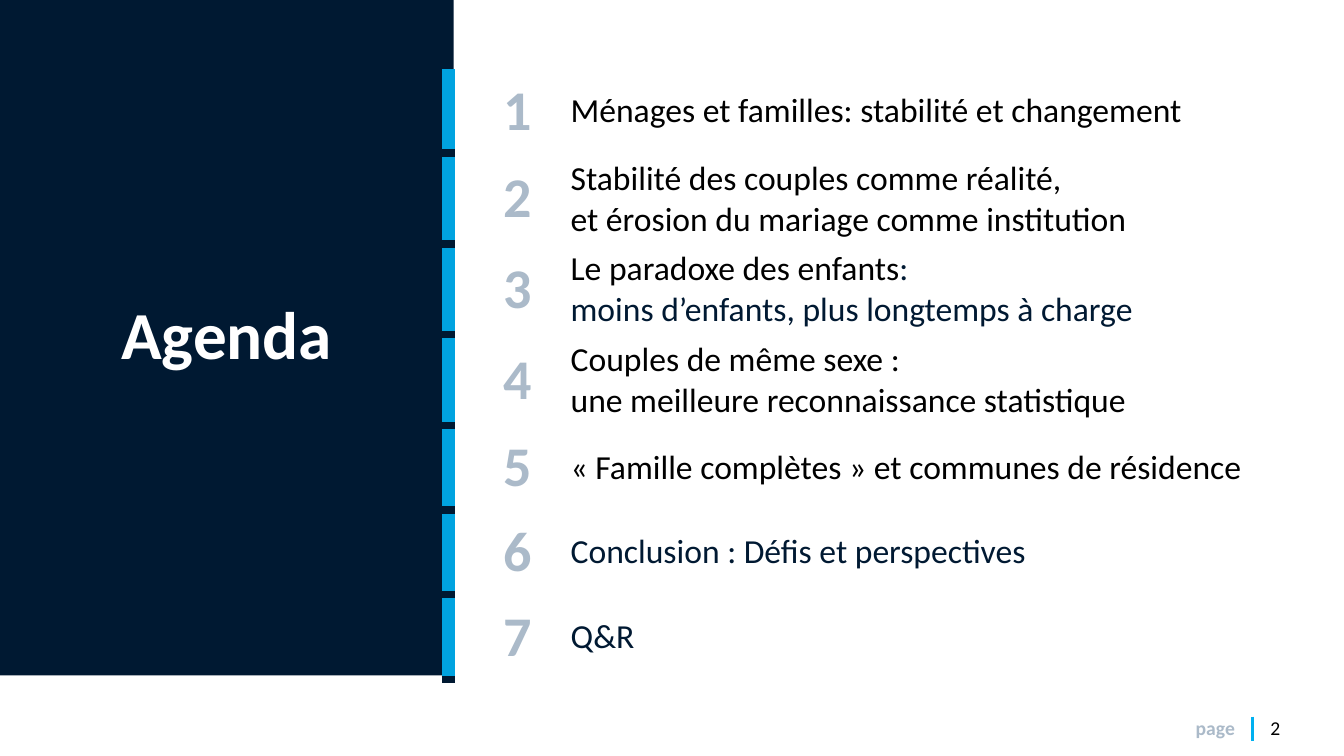
from dataclasses import dataclass

from lxml.etree import SubElement
from pptx import Presentation
from pptx.dml.color import RGBColor
from pptx.enum.shapes import MSO_CONNECTOR, MSO_SHAPE
from pptx.enum.text import MSO_ANCHOR, PP_ALIGN
from pptx.oxml.ns import qn
from pptx.util import Inches, Pt


@dataclass(frozen=True)
class Theme:
    font: str = "Calibri"
    navy: str = "001932"
    blue: str = "00A3E0"
    page_line: str = "00B0F0"
    grey: str = "ABBAC9"
    black: str = "000000"
    white: str = "FFFFFF"
    title_size: int = 48
    number_size: int = 40
    topic_size: int = 24
    page_size: int = 14


THEME = Theme()
NO_STYLE_NO_GRID = "{2D5ABB26-0587-4C30-8999-92F81FD0307C}"


@dataclass(frozen=True)
class Topic:
    text: str
    color: str = THEME.black
    ending: str = ""  # navy continuation of the text


TOPICS = (
    Topic("Ménages et familles: stabilité et changement"),
    Topic("Stabilité des couples comme réalité,\net érosion du mariage comme institution"),
    Topic("Le paradoxe des enfants",
          ending=": \nmoins d’enfants, plus longtemps à charge"),
    Topic("Couples de même sexe : \nune meilleure reconnaissance statistique"),
    Topic("« Famille complètes » et communes de résidence"),
    Topic("Conclusion : Défis et perspectives", THEME.navy),
    Topic("Q&R", THEME.navy),
)


def write(paragraph, text: str, *, size: int, color: str, bold: bool = False,
          align=PP_ALIGN.LEFT) -> None:
    """Append formatted text, turning each newline into a line break."""
    paragraph.alignment = align
    for index, line in enumerate(text.split("\n")):
        if index:
            paragraph.add_line_break()
        run = paragraph.add_run()
        run.text = line
        run.font.name = THEME.font
        run.font.size = Pt(size)
        run.font.bold = bold
        run.font.color.rgb = RGBColor.from_string(color)


def clear_margins(box) -> None:
    box.margin_left = box.margin_right = box.margin_top = box.margin_bottom = 0


def add_border(cell, side: str, color: str, width: float) -> None:
    """Add a border before the fill, where the schema expects it."""
    properties = cell._tc.get_or_add_tcPr()
    border = SubElement(properties, qn(f"a:{side}"), w=str(Pt(width)))
    fill = SubElement(border, qn("a:solidFill"))
    SubElement(fill, qn("a:srgbClr"), val=color)


def add_title_panel(slide) -> None:
    panel = slide.shapes.add_shape(MSO_SHAPE.RECTANGLE, 0, 0, Inches(4.5), Inches(6.7))
    panel.shadow.inherit = False
    panel.fill.solid()
    panel.fill.fore_color.rgb = RGBColor.from_string(THEME.navy)
    panel.line.fill.background()
    frame = panel.text_frame
    clear_margins(frame)
    frame.word_wrap = True
    frame.vertical_anchor = MSO_ANCHOR.MIDDLE
    frame.paragraphs[0].line_spacing = 0.9
    write(frame.paragraphs[0], "Agenda", size=THEME.title_size, color=THEME.white,
          bold=True, align=PP_ALIGN.CENTER)


def add_agenda(slide) -> None:
    row_height = 0.84
    frame = slide.shapes.add_table(len(TOPICS), 3, Inches(4.38), Inches(0.68),
                                   Inches(8.51), Inches(row_height * len(TOPICS)))
    agenda = frame.table
    agenda.first_row = agenda.horz_banding = False
    agenda._tbl.tblPr.find(qn("a:tableStyleId")).text = NO_STYLE_NO_GRID
    for column, width in zip(agenda.columns, (0.13, 1.05, 7.33)):
        column.width = Inches(width)

    for index, topic in enumerate(TOPICS):
        agenda.rows[index].height = Inches(row_height)
        marker, number, title = agenda.rows[index].cells

        # Blue marker, parted from its neighbours by navy borders
        clear_margins(marker)
        for side in ("lnT", "lnB") if index else ("lnB",):
            add_border(marker, side, THEME.navy, 6)
        marker.fill.solid()
        marker.fill.fore_color.rgb = RGBColor.from_string(THEME.blue)

        # Number and topic
        for cell in (number, title):
            cell.fill.background()
            cell.vertical_anchor = MSO_ANCHOR.MIDDLE
        number_line = number.text_frame.paragraphs[0]
        number_line._p.get_or_add_pPr().set("marL", str(Inches(0.2)))
        write(number_line, str(index + 1), size=THEME.number_size, color=THEME.grey,
              bold=True, align=PP_ALIGN.CENTER)
        topic_line = title.text_frame.paragraphs[0]
        write(topic_line, topic.text, size=THEME.topic_size, color=topic.color)
        if topic.ending:
            write(topic_line, topic.ending, size=THEME.topic_size, color=THEME.navy)


def add_page_number(slide) -> None:
    footer = slide.shapes.add_textbox(Inches(11.86), Inches(7.1), Inches(1.4), Inches(0.2))
    clear_margins(footer.text_frame)
    footer.text_frame.word_wrap = True
    line = footer.text_frame.paragraphs[0]
    write(line, "page", size=THEME.page_size, color=THEME.grey, bold=True)
    write(line, "\t2", size=THEME.page_size, color=THEME.black)
    tabs = SubElement(line._p.get_or_add_pPr(), qn("a:tabLst"))
    SubElement(tabs, qn("a:tab"), pos=str(Inches(0.74)), algn="l")

    divider = slide.shapes.add_connector(MSO_CONNECTOR.STRAIGHT, Inches(12.42),
                                         Inches(7.11), Inches(12.42), Inches(7.35))
    divider.line.color.rgb = RGBColor.from_string(THEME.page_line)
    divider.line.width = Pt(2.25)
    SubElement(divider._element.spPr, qn("a:effectLst"))


def main() -> None:
    deck = Presentation()
    deck.slide_width, deck.slide_height = Inches(13.33), Inches(7.5)
    slide = deck.slides.add_slide(deck.slide_layouts[6])
    add_page_number(slide)
    add_title_panel(slide)
    add_agenda(slide)
    deck.save("out.pptx")


if __name__ == "__main__":
    main()
